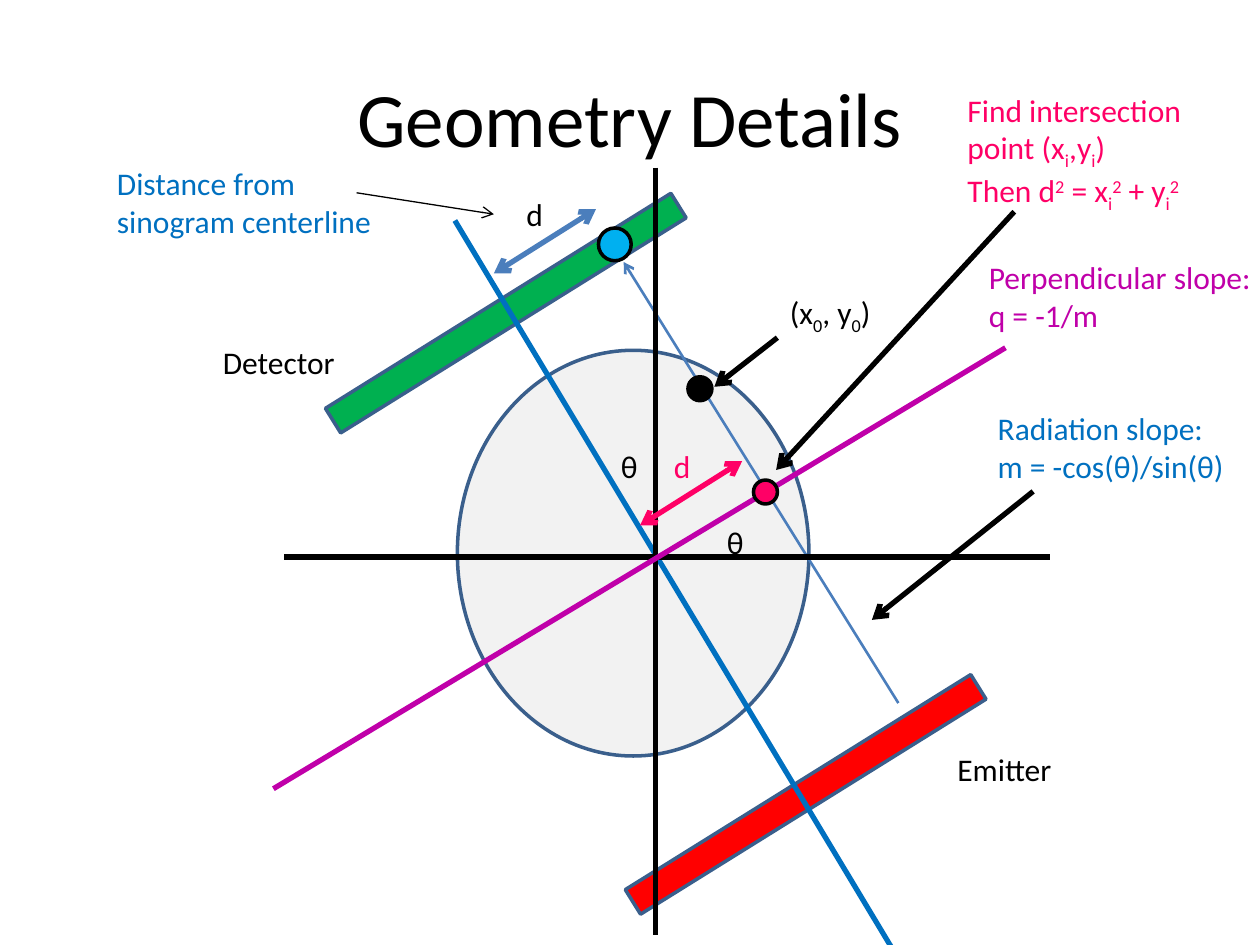
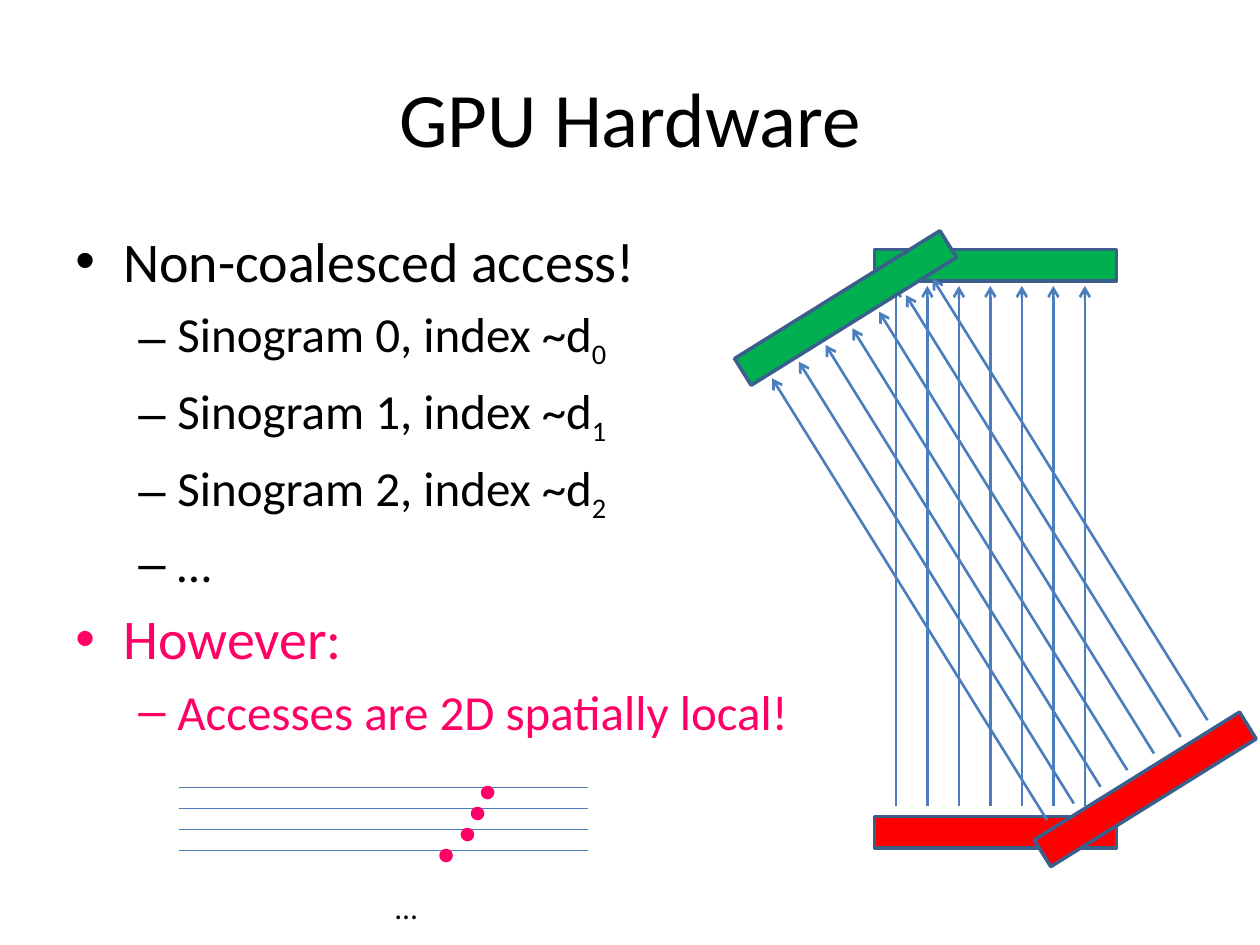
import dataclasses
import itertools
import math

import lxml.etree
import pptx
import pptx.dml.color
import pptx.enum.shapes
import pptx.enum.text
import pptx.oxml.ns
import pptx.util

Inches = pptx.util.Inches
SHAPES = pptx.enum.shapes.MSO_SHAPE


@dataclasses.dataclass(frozen=True)
class Theme:
    font: str = "Calibri"
    title_size: int = 44
    bullet_sizes: tuple = (32, 28)
    label_size: int = 18
    black: str = "000000"
    gray: str = "F2F2F2"
    outline: str = "3A5F8C"
    ray: str = "4B7EBC"
    blue: str = "0070C0"
    cyan: str = "00B0F0"
    purple: str = "C000A9"
    pink: str = "FF0066"
    detector: str = "00B050"
    emitter: str = "FF0000"
    hairline: float = 0.75
    thin: float = 1.5
    border: float = 2
    thick: float = 3
    tilt: float = -31.9


@dataclasses.dataclass(frozen=True)
class Box:
    left: float
    top: float
    width: float
    height: float

    def inner(self, x, y, width, height):
        return Box(self.left + x, self.top + y, width, height)

    def point(self, x, y):
        return self.left + x, self.top + y

    def center(self):
        return self.left + self.width / 2, self.top + self.height / 2

    def lengths(self):
        return [Inches(v) for v in dataclasses.astuple(self)]


THEME = Theme()
TITLE_BOX = Box(0.5, 0.3, 9, 1.25)
BASELINES = {"_": "-25000", "^": "30000"}


def apply(target, values):
    for name, value in values.items():
        setattr(target, name, value)


def rgb(color):
    return pptx.dml.color.RGBColor.from_string(color)


def add_xml(parent, tag, **attributes):
    return lxml.etree.SubElement(parent, pptx.oxml.ns.qn(tag), attributes)


def write(paragraph, text, size, color):
    marked, shift = [], None
    for letter in text:
        if letter in BASELINES:
            shift = BASELINES[letter]
        else:
            marked.append((shift, letter))
            shift = None
    for baseline, letters in itertools.groupby(marked, key=lambda pair: pair[0]):
        run = paragraph.add_run()
        run.text = "".join(letter for _, letter in letters)
        apply(run.font, {"name": THEME.font, "size": pptx.util.Pt(size)})
        run.font.color.rgb = rgb(color)
        if baseline:
            run._r.get_or_add_rPr().set("baseline", baseline)


def add_label(slide, box, lines, color=THEME.black, wrap=True):
    frame = slide.shapes.add_textbox(*box.lengths()).text_frame
    apply(frame, {"word_wrap": wrap,
                  "auto_size": pptx.enum.text.MSO_AUTO_SIZE.SHAPE_TO_FIT_TEXT})
    for i, line in enumerate(lines):
        paragraph = frame.add_paragraph() if i else frame.paragraphs[0]
        write(paragraph, line, THEME.label_size, color)


def add_solid(shapes, kind, box, fill, outline, rotation=0):
    solid = shapes.add_shape(kind, *box.lengths())
    solid.rotation = rotation
    solid.shadow.inherit = False
    solid.fill.solid()
    solid.fill.fore_color.rgb = rgb(fill)
    solid.line.color.rgb = rgb(outline)
    solid.line.width = pptx.util.Pt(THEME.border)


def add_line(shapes, start, end, color, width, arrows=()):
    ends = [Inches(v) for v in (*start, *end)]
    line = shapes.add_connector(pptx.enum.shapes.MSO_CONNECTOR.STRAIGHT, *ends)
    line.line.color.rgb = rgb(color)
    line.line.width = pptx.util.Pt(width)
    for end_tag in arrows:
        add_xml(line.line._get_or_add_ln(), end_tag, type="arrow")
    add_xml(line._element.spPr, "a:effectLst")


TO_END = ("a:tailEnd",)
BOTH_ENDS = ("a:headEnd", "a:tailEnd")


def add_titled_slide(deck, heading):
    slide = deck.slides.add_slide(deck.slide_layouts[5])
    title = slide.shapes.title
    apply(title, dict(zip(("left", "top", "width", "height"), TITLE_BOX.lengths())))
    title.text_frame.vertical_anchor = pptx.enum.text.MSO_ANCHOR.MIDDLE
    paragraph = title.text_frame.paragraphs[0]
    paragraph.alignment = pptx.enum.text.PP_ALIGN.CENTER
    write(paragraph, heading, THEME.title_size, THEME.black)
    return slide


def draw_scanner(slide, box):
    t = THEME
    shapes = slide.shapes
    add_solid(shapes, SHAPES.OVAL, box.inner(1.38, 1.45, 2.79, 3.22), t.gray, t.outline)
    for x, y, color in ((2.53, 4.86, t.emitter), (0.15, 1.04, t.detector)):
        add_solid(shapes, SHAPES.RECTANGLE, box.inner(x, y, 3.23, 0.23),
                  color, t.outline, t.tilt)

    lines = (
        ((4.88, 4.25), (2.7, 0.75), t.ray, t.thin, TO_END),
        ((1.36, 0.42), (5.03, 6.53), t.blue, t.thick, ()),
        ((2.95, 0), (2.95, box.height), t.black, t.thick, ()),
        ((box.width, 3.09), (0, 3.09), t.black, t.thick, ()),
        ((5.73, 1.43), (-0.08, 4.93), t.purple, t.thick, ()),
        ((1.67, 0.84), (2.48, 0.33), t.ray, t.thick, BOTH_ENDS),
        ((2.83, 2.84), (3.64, 2.33), t.pink, t.thick, BOTH_ENDS),
    )
    for start, end, color, width, arrows in lines:
        add_line(shapes, box.point(*start), box.point(*end), color, width, arrows)

    for x, y, size, color in ((3.21, 1.66, 0.19, t.black), (2.5, 0.48, 0.26, t.cyan),
                              (3.73, 2.48, 0.19, t.pink)):
        add_solid(shapes, SHAPES.OVAL, box.inner(x, y, size, size), color, t.black)


def annotate_scanner(slide, box):
    t = THEME
    pointers = (
        ((3.92, 1.35), (3.42, 1.74), t.thick),
        ((5.95, 2.57), (4.67, 3.59), t.thick),
        ((5.8, 0.35), (3.91, 2.4), t.thick),
        ((0.58, 0.2), (1.67, 0.37), t.hairline),
    )
    for start, end, width in pointers:
        add_line(slide.shapes, box.point(*start), box.point(*end), t.black, width, TO_END)

    one_line = (
        (-0.58, 1.34, 1.1, "Detector"),
        (5.25, 4.57, 0.96, "Emitter"),
        (3.92, 0.95, 0.95, "(x_0, y_0)"),
    )
    for x, y, width, text in one_line:
        add_label(slide, box.inner(x, y, width, 0.4), [text], wrap=False)

    symbols = (
        (2.58, 2.17, "θ", t.black),
        (3.42, 2.77, "θ", t.black),
        (1.83, 0.17, "d", t.black),
        (3, 2.17, "d", t.pink),
    )
    for x, y, symbol, color in symbols:
        add_label(slide, box.inner(x, y, 0.42, 0.4), [symbol], color)

    explanations = (
        (-1.42, -0.08, 0.71, t.blue, ["Distance from sinogram centerline"]),
        (5.57, 1.87, 0.71, t.blue, ["Radiation slope:", "m = -cos(θ)/sin(θ)"]),
        (5.5, 0.67, 0.71, t.purple, ["Perpendicular slope:", "q = -1/m"]),
        (5.33, -0.66, 1.01, t.pink, ["Find intersection point (x_i,y_i)",
                                     "Then d^2 = x_i^2 + y_i^2"]),
    )
    for x, y, height, color, text in explanations:
        add_label(slide, box.inner(x, y, 2.34, height), text, color)


def add_bullets(slide, box, items):
    levels = (("•", 0.38, -0.38), ("–", 0.81, -0.31))
    frame = slide.shapes.add_textbox(*box.lengths()).text_frame
    frame.word_wrap = True
    for i, (level, text, color) in enumerate(items):
        mark, margin, indent = levels[level]
        paragraph = frame.add_paragraph() if i else frame.paragraphs[0]
        paragraph.level = level
        layout = paragraph._p.get_or_add_pPr()
        layout.set("marL", str(Inches(margin)))
        layout.set("indent", str(Inches(indent)))
        add_xml(add_xml(layout, "a:spcBef"), "a:spcPct", val="20000")
        add_xml(layout, "a:buFont", typeface="Arial")
        add_xml(layout, "a:buChar", char=mark)
        write(paragraph, text, THEME.bullet_sizes[level], color)


def draw_memory_rows(slide, box):
    access_offsets = (2.41, 2.33, 2.25, 2.08)
    pitch = box.height / (len(access_offsets) - 1)
    for row in range(len(access_offsets)):
        y = row * pitch
        add_line(slide.shapes, box.point(0, y), box.point(box.width, y),
                 THEME.ray, THEME.hairline)
    add_label(slide, box.inner(1.62, 0.75, 0.96, 0.4), ["…"])
    for row, x in enumerate(access_offsets):
        add_solid(slide.shapes, SHAPES.OVAL, box.inner(x, row * pitch, 0.08, 0.08),
                  THEME.pink, THEME.pink)


def draw_projection(slide, box, angle=0):
    shapes = slide.shapes.add_group_shape().shapes
    center_x, center_y = box.center()
    cosine, sine = math.cos(math.radians(angle)), math.sin(math.radians(angle))

    def turn(x, y):
        dx, dy = x - center_x, y - center_y
        return center_x + dx * cosine - dy * sine, center_y + dx * sine + dy * cosine

    thickness = 0.25
    for y, color in ((box.height - thickness, THEME.emitter), (0, THEME.detector)):
        flat = box.inner(0, y, box.width, thickness)
        x, y = turn(*flat.center())
        bar = Box(x - box.width / 2, y - thickness / 2, box.width, thickness)
        add_solid(shapes, SHAPES.RECTANGLE, bar, color, THEME.outline, angle)
    for ray in range(7):
        x = 0.17 + 0.25 * ray
        add_line(shapes, turn(*box.point(x, 4.42)), turn(*box.point(x, 0.29)),
                 THEME.ray, THEME.thin, TO_END)


def build_geometry(deck):
    slide = add_titled_slide(deck, "Geometry Details")
    axes = Box(2.25, 1.33, 6.08, 6.09)
    draw_scanner(slide, axes)
    annotate_scanner(slide, axes)


def build_hardware(deck):
    slide = add_titled_slide(deck, "GPU Hardware")
    sinograms = [(1, f"Sinogram {n}, index ~d_{n}", THEME.black) for n in range(3)]
    add_bullets(slide, Box(0.5, 1.75, 9, 4.36), [
        (0, "Non-coalesced access!", THEME.black),
        *sinograms,
        (1, "…", THEME.black),
        (0, "However:", THEME.pink),
        (1, "Accesses are 2D spatially local!", THEME.pink),
    ])
    draw_memory_rows(slide, Box(1.42, 6.25, 3.25, 0.5))
    for angle in (0, THEME.tilt):
        draw_projection(slide, Box(6.94, 1.98, 1.92, 4.75), angle)


def main():
    deck = pptx.Presentation()
    apply(deck, {"slide_width": Inches(10), "slide_height": Inches(7.5)})
    build_geometry(deck)
    build_hardware(deck)
    deck.save("out.pptx")


if __name__ == "__main__":
    main()
